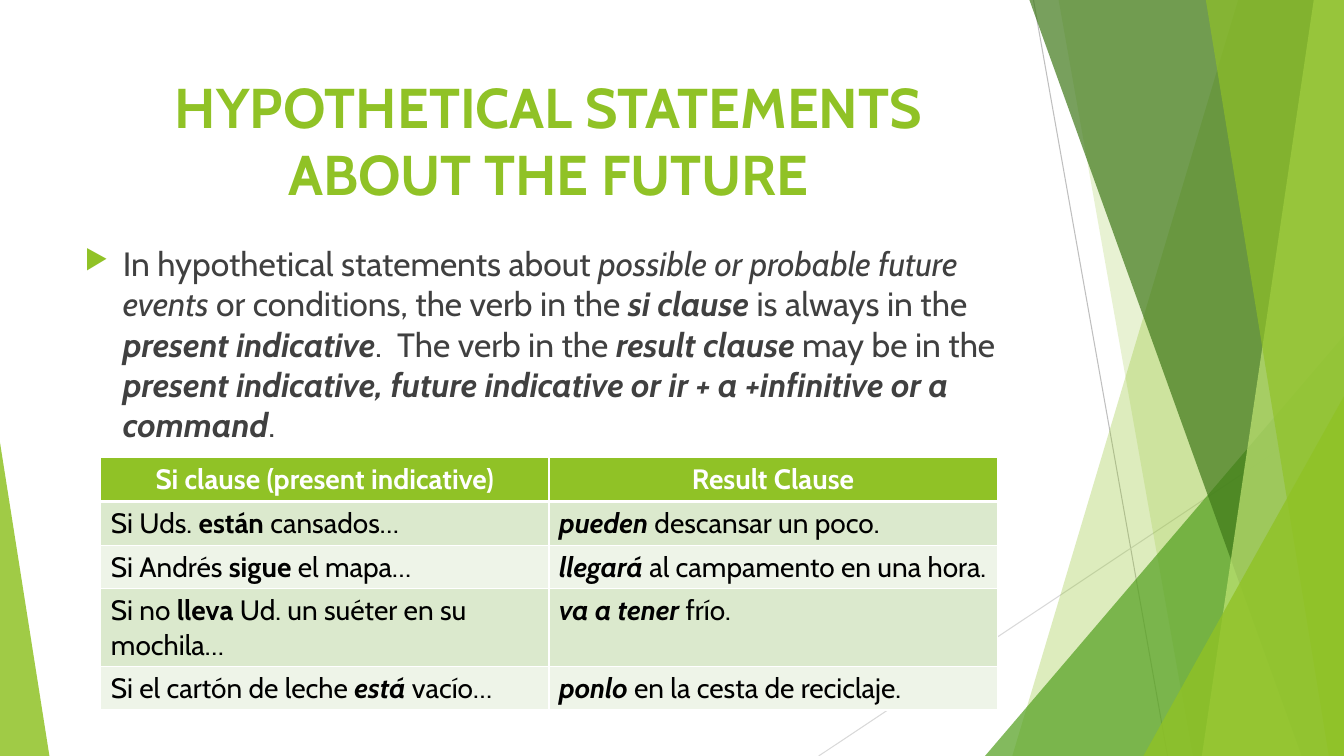
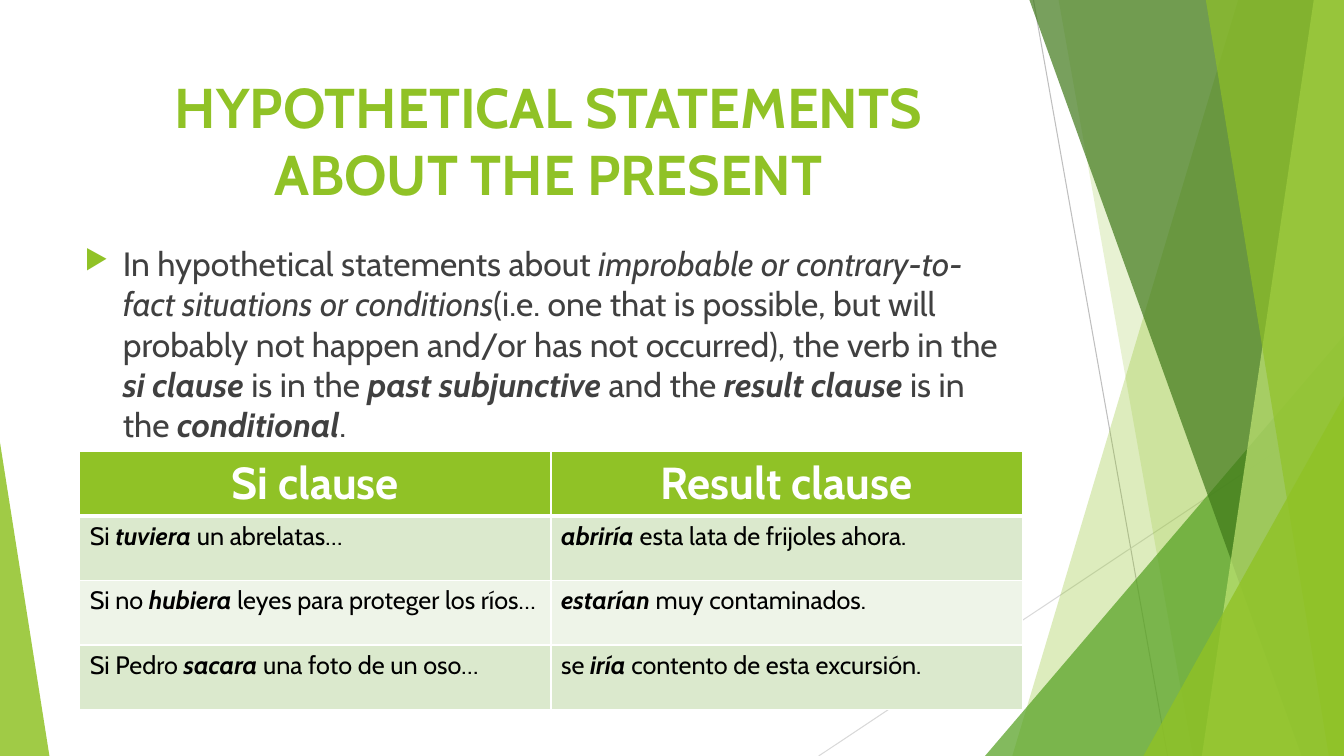
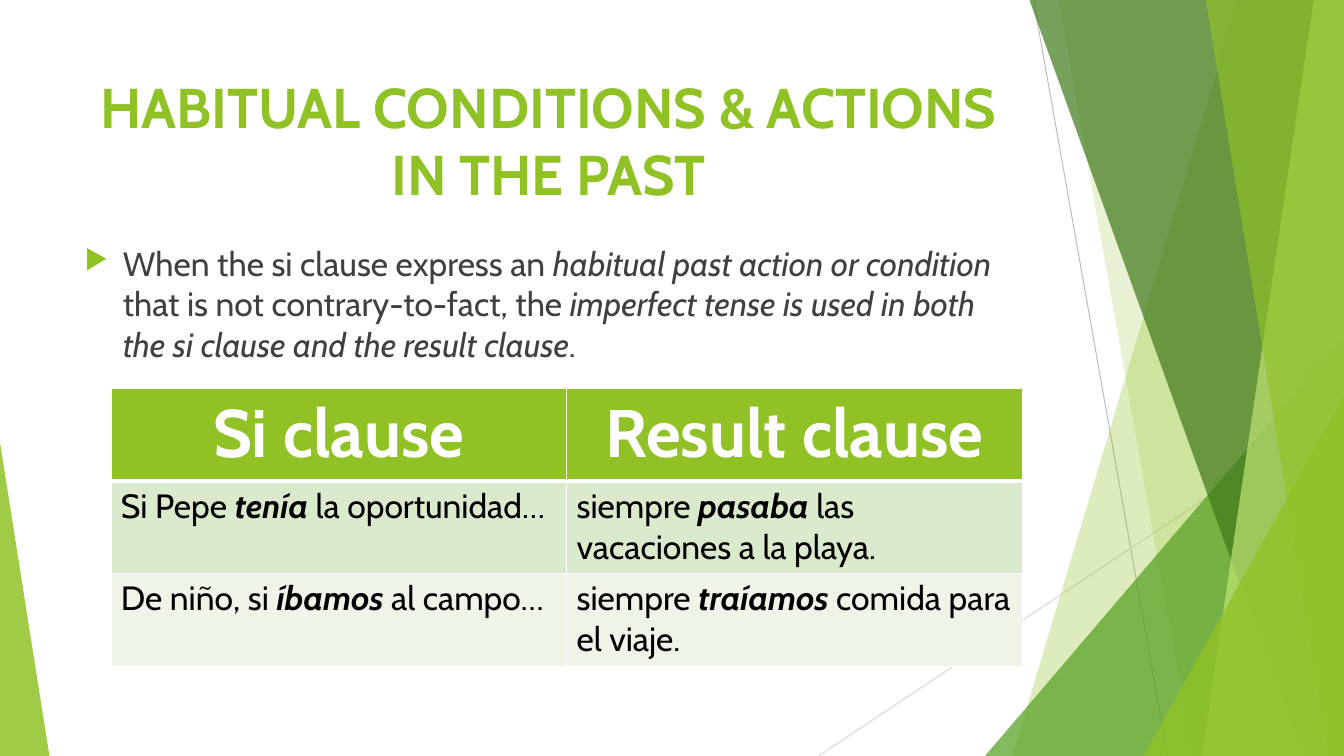
from lxml import etree
from pptx import Presentation
from pptx import util as u
from pptx.dml.color import RGBColor
from pptx.enum import shapes, text
from pptx.oxml.ns import qn

W, H = 13.33, 7.5
FONT = "Cabin"

GREEN = RGBColor(0x90, 0xC2, 0x26)
MID_GREEN = RGBColor(0x54, 0xA0, 0x21)
DARK_GREEN = RGBColor(0x3F, 0x78, 0x19)
PALE_GREEN = RGBColor(0xC0, 0xE4, 0x74)
ROW_TINTS = RGBColor(0xDB, 0xE9, 0xCD), RGBColor(0xEE, 0xF4, 0xE8)
WHITE = RGBColor(0xFF, 0xFF, 0xFF)
BLACK = RGBColor(0, 0, 0)
TEXT_GREY = RGBColor(0x40, 0x40, 0x40)
LINE_GREY = RGBColor(0xBF, 0xBF, 0xBF)
LIGHT_GREY = RGBColor(0xD9, 0xD9, 0xD9)

# Content: a run is plain text, or (text, style) with b = bold and i = italic
SLIDES = [
    {
        "title": "HYPOTHETICAL STATEMENTS ABOUT THE FUTURE",
        "rule": [
            "In hypothetical statements about ", ("possible or probable future events ", "i"),
            "or conditions, the verb in the ", ("si clause ", "bi"),
            "is always in the ", ("present indicative", "bi"),
            ".  The verb in the ", ("result clause", "bi"), " may be in the ",
            ("present indicative, future indicative or ir + a +infinitive or a command", "bi"), "."],
        "header": ["Si clause (present indicative)", "Result Clause"],
        "examples": [
            (["Si Uds. ", ("están ", "b"), "cansados…"],
             [("pueden ", "bi"), "descansar un poco."]),
            (["Si Andrés ", ("sigue", "b"), " el mapa…"],
             [("llegará", "bi"), " al campamento en una hora."]),
            (["Si no ", ("lleva ", "b"), "Ud. un suéter en su mochila…"],
             [("va a tener ", "bi"), "frío."]),
            (["Si el cartón de leche ", ("está ", "bi"), "vacío…"],
             [("ponlo ", "bi"), "en la cesta de reciclaje."])],
        "table": {"left": 1, "top": 4.54, "width": 8.89, "row": 0.41, "sizes": (20, 20)},
    },
    {
        "title": "HYPOTHETICAL STATEMENTS ABOUT THE PRESENT",
        "rule": [
            "In hypothetical statements about ",
            ("improbable or contrary-to-fact situations or conditions", "i"),
            "(i.e. one that is possible, but will probably not happen and/or has not occurred), "
            "the verb in the ", ("si clause ", "bi"), "is in the ", ("past subjunctive ", "bi"),
            "and the ", ("result clause ", "bi"), "is in the ", ("conditional", "bi"), "."],
        "header": ["Si clause", "Result clause"],
        "examples": [
            (["Si ", ("tuviera", "bi"), " un abrelatas…"],
             [("abriría ", "bi"), "esta lata de frijoles ahora."]),
            (["Si no ", ("hubiera ", "bi"), "leyes para proteger los ríos…"],
             [("estarían ", "bi"), "muy contaminados."]),
            (["Si Pedro ", ("sacara ", "bi"), "una foto de un oso…"],
             ["se ", ("iría ", "bi"), "contento de esta excursión."])],
        "table": {"left": 0.79, "top": 4.48, "width": 9.35, "row": 0.64, "sizes": (32, 18)},
    },
    {
        "title": "HABITUAL CONDITIONS & ACTIONS IN THE PAST",
        "rule": [
            "When the si clause express an ", ("habitual past action or condition", "i"),
            " that is not contrary-to-fact, the ",
            ("imperfect tense is used in both the si clause and the result clause", "i"), "."],
        "header": ["Si clause", "Result clause"],
        "examples": [
            (["Si Pepe ", ("tenía", "bi"), " la oportunidad…"],
             ["siempre ", ("pasaba", "bi"), " las vacaciones a la playa."]),
            (["De niño, si ", ("íbamos", "bi"), " al campo…"],
             ["siempre ", ("traíamos", "bi"), " comida para el viaje."])],
        "table": {"left": 1.1, "top": 3.85, "width": 9.04, "row": 0.92, "sizes": (48, 24)},
    },
]

# Shared decoration, back to front
RAYS = [((10.25, 0), (11.58, H), LINE_GREY), ((W, 4.03), (8.12, H), LIGHT_GREY)]
# strip: x at the top, x at the bottom, running to the right edge
# wedge: left, top, width, apex position, standing on the bottom edge
FACETS = [
    ("strip", (12.28, 10.04), GREEN, 30),
    ("strip", (10.5, 11.83), GREEN, 20),
    ("wedge", (9.77, 3.33, W - 9.77, 1), MID_GREEN, 72),
    ("strip", (10.21, 12.91), DARK_GREEN, 70),
    ("strip", (13.03, 11.92), PALE_GREEN, 70),
    ("strip", (11.96, 13.18), GREEN, 65),
    ("wedge", (11.34, 3.93, W - 11.34, 1), GREEN, 80),
    ("wedge", (0, 4.39, 0.49, 0), GREEN, 85),
]


def add_strip(slide, x_top, x_bottom):
    corners = [(u.Inches(x), u.Inches(y))
               for x, y in ((x_top, 0), (W, 0), (W, H), (x_bottom, H))]
    outline = slide.shapes.build_freeform(*corners[0])
    outline.add_line_segments(corners[1:], close=True)
    return outline.convert_to_shape()


def add_wedge(slide, left, top, width, apex):
    wedge = slide.shapes.add_shape(
        shapes.MSO_SHAPE.ISOSCELES_TRIANGLE,
        *map(u.Inches, (left, top, width, H - top)))
    wedge.adjustments[0] = apex
    return wedge


def decorate(slide):
    for start, end, colour in RAYS:
        ray = slide.shapes.add_connector(
            shapes.MSO_CONNECTOR.STRAIGHT, *map(u.Inches, start + end))
        ray.line.color.rgb = colour
        ray.line.width = u.Pt(0.75)
        etree.SubElement(ray._element.spPr, qn("a:effectLst"))
    for kind, geometry, colour, opacity in FACETS:
        facet = (add_strip if kind == "strip" else add_wedge)(slide, *geometry)
        facet.shadow.inherit = False
        facet.line.fill.background()
        facet.fill.solid()
        facet.fill.fore_color.rgb = colour
        tint = facet._element.spPr.find(qn("a:solidFill")).find(qn("a:srgbClr"))
        etree.SubElement(tint, qn("a:alpha"), val=str(opacity * 1000))


def write(paragraph, runs, size, colour):
    for item in runs:
        words, style = (item, "") if isinstance(item, str) else item
        run = paragraph.add_run()
        run.text = words
        run.font.name = FONT
        run.font.size = u.Pt(size)
        run.font.color.rgb = colour
        run.font.bold = "b" in style
        run.font.italic = "i" in style


def add_text(slide, top, height):
    frame = slide.shapes.add_textbox(*map(u.Inches, (0.74, top, 9.4, height))).text_frame
    frame.word_wrap = True
    return frame.paragraphs[0]


def add_bullet(paragraph):
    paragraph.space_before = u.Pt(10)
    props = paragraph._p.get_or_add_pPr()
    props.set("marL", str(u.Inches(0.38)))
    props.set("indent", str(-u.Inches(0.38)))
    colour = etree.SubElement(props, qn("a:buClr"))
    etree.SubElement(colour, qn("a:srgbClr"), val=str(GREEN))
    etree.SubElement(props, qn("a:buSzPct"), val="80000")
    etree.SubElement(props, qn("a:buChar"), char="▶")


def add_borders(cell, row):
    props = cell._tc.get_or_add_tcPr()
    for side in "LRTB":
        under_header = (side, row) in (("B", 0), ("T", 1))
        edge = etree.SubElement(props, qn("a:ln" + side),
                                w=str(u.Pt(3 if under_header else 1)))
        fill = etree.SubElement(edge, qn("a:solidFill"))
        etree.SubElement(fill, qn("a:srgbClr"), val=str(WHITE))


def add_examples(slide, header, examples, place):
    rows = [[[(label, "b")] for label in header], *examples]
    header_size, example_size = place["sizes"]
    grid = slide.shapes.add_table(len(rows), len(header), *map(u.Inches, (
        place["left"], place["top"], place["width"], place["row"] * len(rows)))).table
    for r, clauses in enumerate(rows):
        grid.rows[r].height = u.Inches(place["row"])
        for c, runs in enumerate(clauses):
            cell = grid.cell(r, c)
            add_borders(cell, r)
            cell.fill.solid()
            cell.fill.fore_color.rgb = ROW_TINTS[(r - 1) % 2] if r else GREEN
            paragraph = cell.text_frame.paragraphs[0]
            if r == 0:
                paragraph.alignment = text.PP_ALIGN.CENTER
            write(paragraph, runs, example_size if r else header_size, BLACK if r else WHITE)


def main():
    deck = Presentation()
    deck.slide_width, deck.slide_height = u.Inches(W), u.Inches(H)
    for content in SLIDES:
        slide = deck.slides.add_slide(deck.slide_layouts[6])
        decorate(slide)
        title = add_text(slide, 0.67, 1.44)
        title.alignment = text.PP_ALIGN.CENTER
        write(title, [(content["title"], "b")], 40, GREEN)
        rule = add_text(slide, 2.36, 4.24)
        add_bullet(rule)
        write(rule, content["rule"], 24, TEXT_GREY)
        add_examples(slide, content["header"], content["examples"], content["table"])
    deck.save("out.pptx")


if __name__ == "__main__":
    main()
